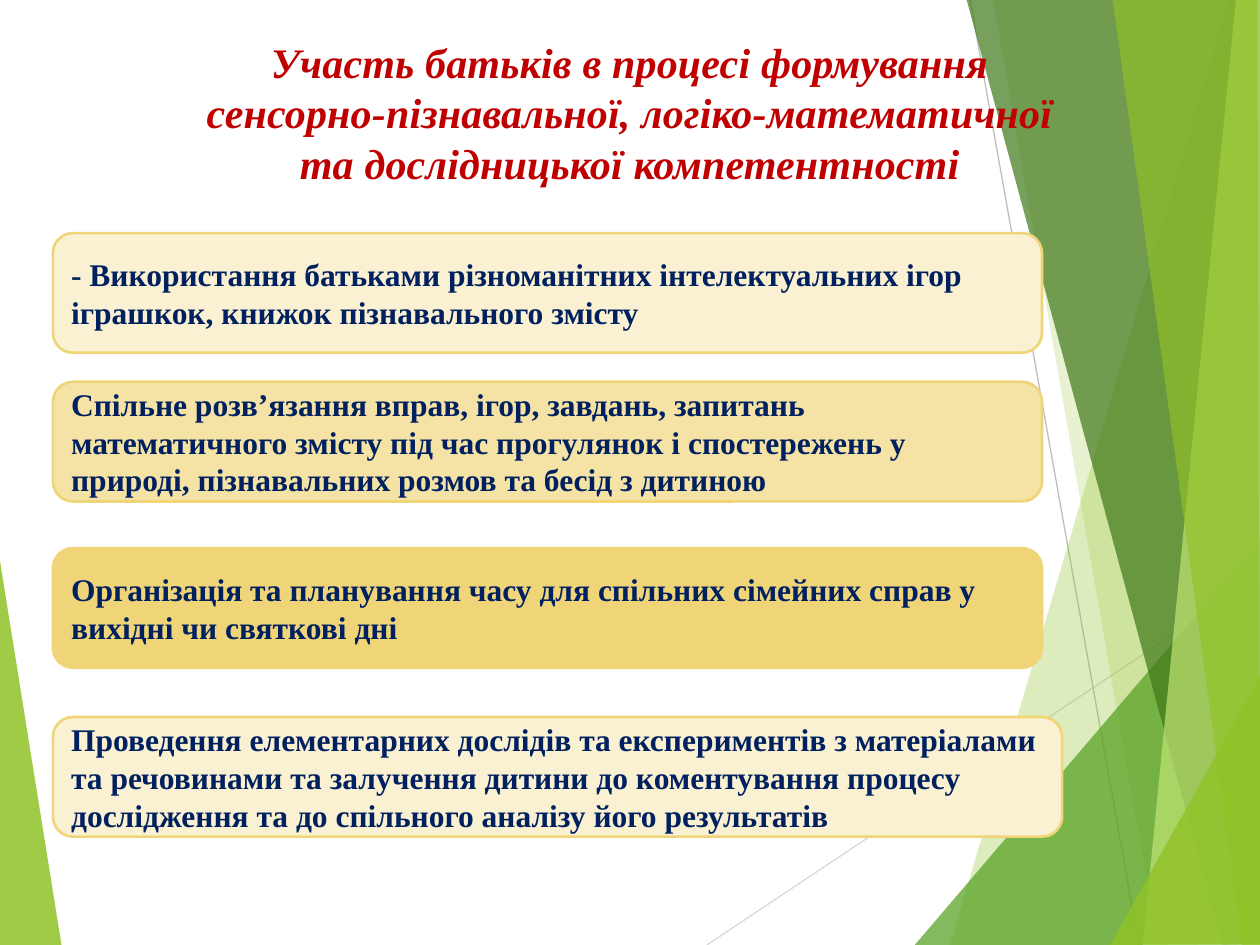
from lxml.etree import SubElement
from pptx import Presentation
from pptx.dml.color import RGBColor
from pptx.enum.shapes import MSO_CONNECTOR, MSO_SHAPE
from pptx.enum.text import MSO_ANCHOR, PP_ALIGN
from pptx.oxml.ns import qn
from pptx.util import Inches, Pt

LIME = RGBColor(0x90, 0xC2, 0x26)
PALE_LIME = RGBColor(0xC0, 0xE4, 0x74)
GREEN = RGBColor(0x54, 0xA0, 0x21)
DARK_GREEN = RGBColor(0x3F, 0x78, 0x19)
GRAY = RGBColor(0xBF, 0xBF, 0xBF)
LIGHT_GRAY = RGBColor(0xD9, 0xD9, 0xD9)
RED = RGBColor(0xC0, 0x00, 0x00)
NAVY = RGBColor(0x00, 0x20, 0x60)
CREAM = RGBColor(0xFA, 0xF1, 0xD2)
SAND = RGBColor(0xF5, 0xE3, 0xA5)
GOLD = RGBColor(0xF0, 0xD5, 0x78)
FONT = "Times New Roman"

TITLE = ("Участь батьків в процесі формування сенсорно-пізнавальної, "
         "логіко-математичної та дослідницької компетентності")
CARDS = [
    (1.85, 7.85, CREAM, "- Використання батьками різноманітних інтелектуальних ігор  "
     "іграшкок, книжок пізнавального змісту"),
    (3.03, 7.85, SAND, "Спільне розв’язання вправ, ігор, завдань, запитань математичного "
     "змісту під час прогулянок і спостережень у природі, пізнавальних розмов та бесід "
     "з дитиною"),
    (4.35, 7.85, GOLD, "Організація та планування часу для спільних сімейних справ у "
     "вихідні чи святкові дні"),
    (5.69, 8.01, CREAM, "Проведення елементарних дослідів та експериментів з матеріалами "
     "та речовинами та залучення дитини до коментування процесу дослідження та до "
     "спільного аналізу його результатів"),
]
CARD_LEFT, CARD_HEIGHT = 0.42, 0.95

LEFT_FACET = (LIME, 85, [(-0.01, 4.39), (0.49, 7.51), (-0.01, 7.5)])
RAYS = [
    (LIGHT_GRAY, (5.61, 7.5), (10.01, 4.57)),
    (GRAY, (7.7, 0), (9.04, 7.5)),
]
RIGHT_FACETS = [
    (LIME, 30, [(9.75, 0), (7.54, 7.5), (10.02, 7.51), (10.01, 0.01)]),
    (LIME, 20, [(7.88, -0.01), (9.19, 7.5), (10.01, 7.5), (10.01, -0.01)]),
    (GREEN, 72, [(7.26, 7.5), (10, 4.29), (10.01, 7.5)]),
    (DARK_GREEN, 70, [(7.67, -0.01), (9.7, 7.5), (10.01, 7.49), (10.01, -0.01)]),
    (PALE_LIME, 70, [(9.81, -0.01), (9.07, 7.5), (10.01, 7.5), (10, -0.01)]),
    (LIME, 65, [(8.83, -0.01), (9.86, 7.5), (10, 7.5), (9.98, -0.01)]),
    (LIME, 80, [(8.81, 7.5), (10.01, 5.35), (10.01, 7.49)]),
]


def add_facet(shapes, color, opacity, corners):
    points = [(Inches(x), Inches(y)) for x, y in corners]
    builder = shapes.build_freeform(*points[0], scale=1.0)
    builder.add_line_segments(points[1:], close=True)
    facet = builder.convert_to_shape()
    facet.shadow.inherit = False
    facet.fill.solid()
    facet.fill.fore_color.rgb = color
    facet.line.fill.background()
    fill_color = facet.fill._xPr.find(qn("a:solidFill"))[0]
    SubElement(fill_color, qn("a:alpha"), val=str(opacity * 1000))


def add_ray(shapes, color, start, end):
    ray = shapes.add_connector(MSO_CONNECTOR.STRAIGHT, *map(Inches, start + end))
    ray.line.color.rgb = color
    ray.line.width = Pt(0.75)
    SubElement(ray._element.spPr, qn("a:effectLst"))


def write(shape, text, size, color, alignment):
    shape.text_frame.word_wrap = True
    paragraph = shape.text_frame.paragraphs[0]
    paragraph.text = text
    paragraph.alignment = alignment
    font = paragraph.font
    font.name, font.size, font.bold = FONT, Pt(size), True
    font.color.rgb = color
    return paragraph


def add_title(shapes):
    title = shapes.add_textbox(Inches(1.36), Inches(0.24), Inches(7.28), Inches(1.31))
    paragraph = write(title, TITLE, 24, RED, PP_ALIGN.CENTER)
    paragraph.font.italic = True
    paragraph.runs[0].font._element.set("spc", "10")


def add_card(shapes, top, width, color, text):
    card = shapes.add_shape(MSO_SHAPE.ROUNDED_RECTANGLE, Inches(CARD_LEFT), Inches(top),
                            Inches(width), Inches(CARD_HEIGHT))
    card.shadow.inherit = False
    card.fill.solid()
    card.fill.fore_color.rgb = color
    card.line.color.rgb = GOLD
    card.line.width = Pt(1.5)
    card.text_frame.vertical_anchor = MSO_ANCHOR.MIDDLE
    write(card, text, 18, NAVY, PP_ALIGN.LEFT)


def main():
    deck = Presentation()
    deck.slide_width, deck.slide_height = Inches(10), Inches(7.5)
    shapes = deck.slides.add_slide(deck.slide_layouts[6]).shapes
    add_facet(shapes, *LEFT_FACET)
    for ray in RAYS:
        add_ray(shapes, *ray)
    for facet in RIGHT_FACETS:
        add_facet(shapes, *facet)
    add_title(shapes)
    for card in CARDS:
        add_card(shapes, *card)
    deck.save("out.pptx")


if __name__ == "__main__":
    main()
